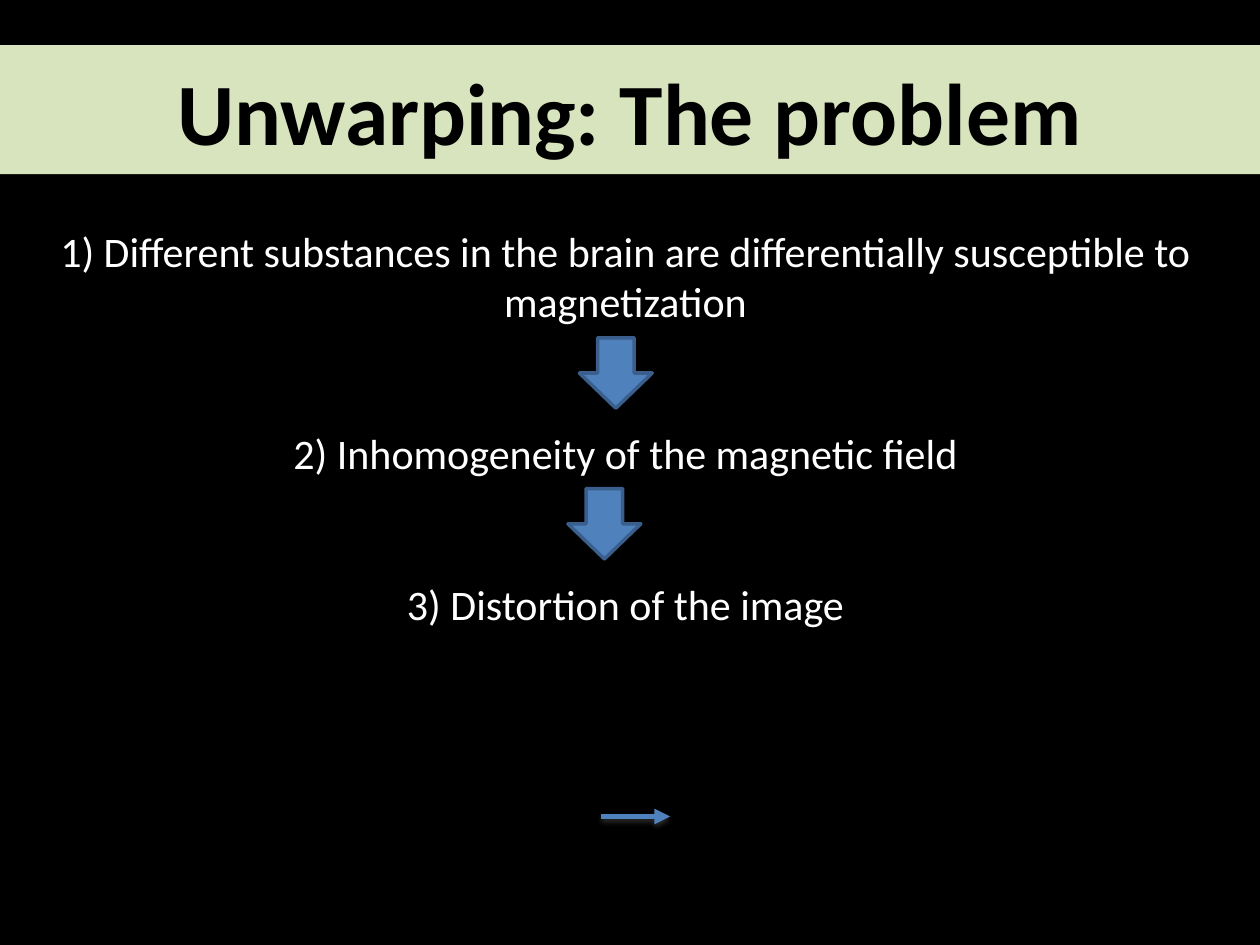
from dataclasses import dataclass

from lxml import etree
from pptx import Presentation
from pptx.dml.color import RGBColor
from pptx.enum.shapes import MSO_CONNECTOR, MSO_SHAPE
from pptx.enum.text import MSO_ANCHOR, MSO_AUTO_SIZE, PP_ALIGN
from pptx.oxml import parse_xml
from pptx.oxml.ns import nsdecls, qn
from pptx.util import Cm, Pt

RECTANGLE = MSO_SHAPE.RECTANGLE
DOWN_ARROW = MSO_SHAPE.DOWN_ARROW
STRAIGHT = MSO_CONNECTOR.STRAIGHT
CENTER = PP_ALIGN.CENTER
TOP, MIDDLE = MSO_ANCHOR.TOP, MSO_ANCHOR.MIDDLE
NO_AUTOFIT = MSO_AUTO_SIZE.NONE


@dataclass(frozen=True)
class Theme:
    font: str = "Calibri"
    background: RGBColor = RGBColor(0, 0, 0)
    band: RGBColor = RGBColor(0xD7, 0xE4, 0xBD)
    title: RGBColor = RGBColor(0, 0, 0)
    body: RGBColor = RGBColor(0xFF, 0xFF, 0xFF)
    arrow: RGBColor = RGBColor(0x4F, 0x81, 0xBD)
    arrow_edge: RGBColor = RGBColor(0x3A, 0x5F, 0x8C)
    title_size: Pt = Pt(50)
    body_size: Pt = Pt(24)
    step_gap: Pt = Pt(57.6)


theme = Theme()


def place(shape, left, top, width, height):
    shape.left, shape.top = Cm(left), Cm(top)
    shape.width, shape.height = Cm(width), Cm(height)


def add_text(paragraph, text, size, color, bold=False):
    paragraph.alignment = CENTER
    run = paragraph.add_run()
    run.text = text
    run.font.name = theme.font
    run.font.size = size
    run.font.bold = bold
    run.font.color.rgb = color


# Slide with a black background
presentation = Presentation()
presentation.slide_width, presentation.slide_height = Cm(25.4), Cm(19.05)
slide = presentation.slides.add_slide(presentation.slide_layouts[1])
slide.background.fill.solid()
slide.background.fill.fore_color.rgb = theme.background
title, body = slide.placeholders

# Title on a full-width band
band = slide.shapes.add_shape(RECTANGLE, 0, Cm(0.91), Cm(25.4), Cm(2.6))
band.shadow.inherit = False
band.fill.solid()
band.fill.fore_color.rgb = theme.band
band.line.fill.background()
title.element.addprevious(band.element)

place(title, 0.15, 0.18, 25.1, 4.09)
title.text_frame.auto_size = NO_AUTOFIT
title.text_frame.vertical_anchor = MIDDLE
add_text(title.text_frame.paragraphs[0], "Unwarping: The problem",
         theme.title_size, theme.title, bold=True)

# Three steps, spaced to leave room for the arrows
steps = [
    "1) Different substances in the brain are differentially susceptible to magnetization",
    "2) Inhomogeneity of the magnetic field",
    "3) Distortion of the image",
]
place(body, 0.89, 4.42, 23.44, 8.46)
frame = body.text_frame
frame.auto_size = NO_AUTOFIT
frame.vertical_anchor = TOP
for number, step in enumerate(steps):
    paragraph = frame.add_paragraph() if number else frame.paragraphs[0]
    paragraph.space_before = theme.step_gap if number else Pt(0)
    add_text(paragraph, step, theme.body_size, theme.body)
    properties = paragraph.element.get_or_add_pPr() if hasattr(paragraph, "element") else paragraph._p.get_or_add_pPr()
    properties.set("marL", "0")
    properties.set("indent", "0")
    etree.SubElement(properties, qn("a:buNone"))

# Small arrow pointing right, with a soft shadow
pointer = slide.shapes.add_connector(STRAIGHT, Cm(12.12), Cm(16.46), Cm(13.51), Cm(16.46))
pointer.line.color.rgb = theme.arrow
pointer.line.width = Pt(3)
etree.SubElement(pointer.line._get_or_add_ln(), qn("a:tailEnd"), type="triangle")
pointer.element.spPr.append(parse_xml(
    f'<a:effectLst {nsdecls("a")}>'
    f'<a:outerShdw blurRad="{Pt(3.1)}" dist="{Pt(1.8)}" dir="5400000" rotWithShape="0">'
    '<a:srgbClr val="808080"><a:alpha val="35000"/></a:srgbClr>'
    '</a:outerShdw></a:effectLst>'))

# Down arrows between the steps
for left, top in [(11.68, 6.81), (11.45, 9.85)]:
    arrow = slide.shapes.add_shape(DOWN_ARROW, Cm(left), Cm(top), Cm(1.47), Cm(1.42))
    arrow.shadow.inherit = False
    arrow.fill.solid()
    arrow.fill.fore_color.rgb = theme.arrow
    arrow.line.color.rgb = theme.arrow_edge
    arrow.line.width = Pt(2)

presentation.save("out.pptx")
